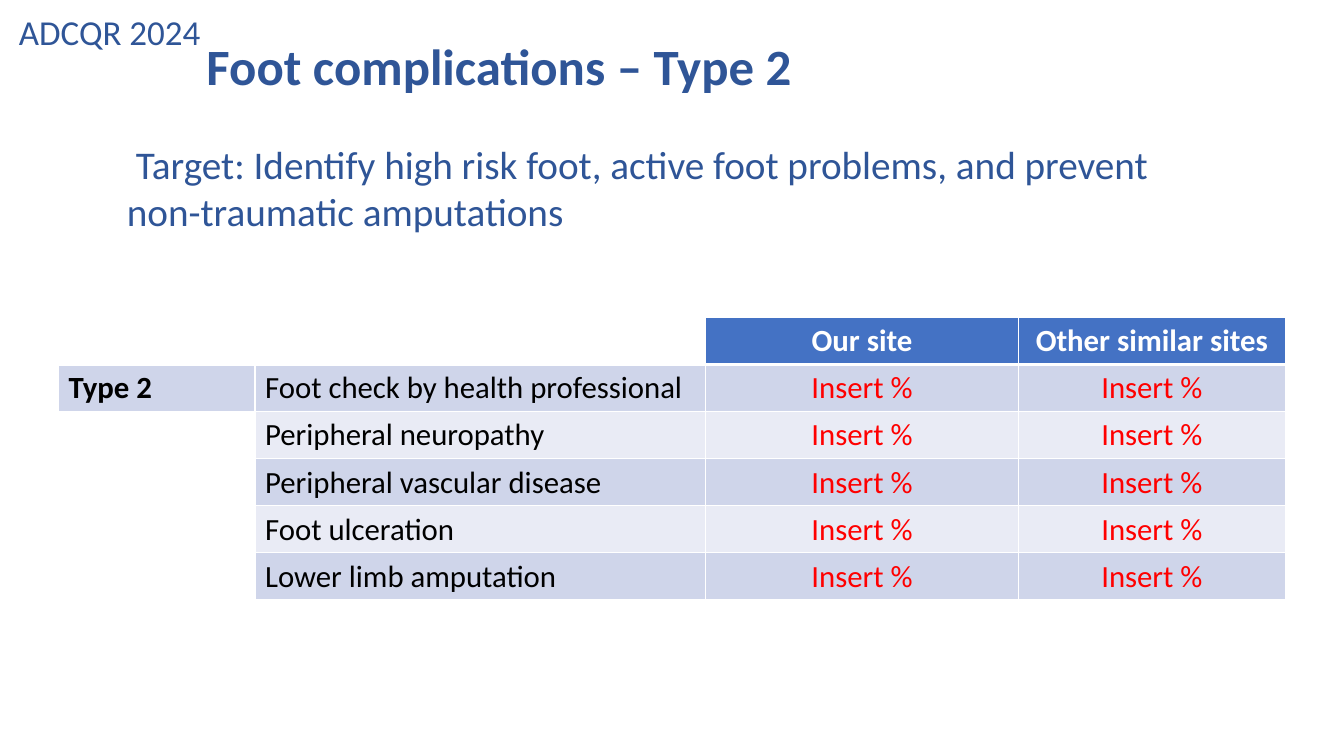
from lxml.etree import SubElement
from pptx import Presentation
from pptx.dml.color import RGBColor
from pptx.enum.text import MSO_ANCHOR as Anchor, PP_ALIGN as Align
from pptx.oxml.ns import qn
from pptx.util import Inches, Pt

TITLE = "Foot complications – Type 2"
TARGET = ("Target: Identify high risk foot, active foot problems, "
          "and prevent non-traumatic amputations")
REGISTRY = "ADCQR 2024"
ROWS = [
    ("", "", "Our site", "Other similar sites"),
    ("Type 2", "Foot check by health professional", "Insert %", "Insert %"),
    ("", "Peripheral neuropathy", "Insert %", "Insert %"),
    ("", "Peripheral vascular disease", "Insert %", "Insert %"),
    ("", "Foot ulceration", "Insert %", "Insert %"),
    ("", "Lower limb amputation", "Insert %", "Insert %"),
]
COLUMN_WIDTHS = (1.95, 4.47, 3.1, 2.65)
TABLE_LEFT, TABLE_TOP, TABLE_HEIGHT = 0.58, 3.15, 2.8
FONT = "Calibri"
NAVY, BLUE, WHITE, BLACK, RED = "2F5597", "4472C4", "FFFFFF", "000000", "FF0000"
BANDS = ("E9EBF5", "CFD5EA")


def color(value):
    return RGBColor.from_string(value)


def style(paragraph, size, value, bold=False):
    font = paragraph.font
    font.name, font.size, font.bold = FONT, Pt(size), bold
    font.color.rgb = color(value)


def add_text(slide, text, box, size, bold=False):
    shape = slide.shapes.add_textbox(*map(Inches, box))
    frame = shape.text_frame
    frame.word_wrap = True
    frame.text = text
    style(frame.paragraphs[0], size, NAVY, bold)
    return frame


def set_borders(cell, bottom_width):
    properties = cell._tc.get_or_add_tcPr()
    widths = {"a:lnL": 1, "a:lnR": 1, "a:lnT": 1, "a:lnB": bottom_width}
    for position, (side, width) in enumerate(widths.items()):
        line = SubElement(properties, qn(side), w=str(Pt(width)))
        fill = SubElement(line, qn("a:solidFill"))
        SubElement(fill, qn("a:srgbClr"), val=WHITE)
        properties.insert(position, line)


def fill_cell(cell, text, row, column):
    header, value_column = row == 0, column > 1
    if not text:
        background = WHITE
    else:
        background = BLUE if header else BANDS[row % 2]
    cell.fill.solid()
    cell.fill.fore_color.rgb = color(background)
    set_borders(cell, 3 if header else 1)
    cell.text = text
    paragraph = cell.text_frame.paragraphs[0]
    paragraph.alignment = Align.CENTER if value_column else Align.LEFT
    ink = WHITE if header else RED if value_column else BLACK
    style(paragraph, 22, ink, header or column == 0)


def add_results(slide):
    box = (TABLE_LEFT, TABLE_TOP, sum(COLUMN_WIDTHS), TABLE_HEIGHT)
    table = slide.shapes.add_table(
        len(ROWS), len(COLUMN_WIDTHS), *map(Inches, box)).table
    for column, width in zip(table.columns, COLUMN_WIDTHS):
        column.width = Inches(width)
    for row, texts in enumerate(ROWS):
        for column, text in enumerate(texts):
            fill_cell(table.cell(row, column), text, row, column)


def main():
    presentation = Presentation()
    presentation.slide_width = Inches(13.33)
    presentation.slide_height = Inches(7.5)
    slide = presentation.slides.add_slide(presentation.slide_layouts[6])

    title = add_text(slide, TITLE, (1.95, 0.05, 6.37, 1.45), 36.3, True)
    title.vertical_anchor = Anchor.MIDDLE
    title.margin_bottom = Inches(0.3)

    target = add_text(slide, TARGET, (1.16, 1.34, 10.77, 1.04), 28)
    target.paragraphs[0]._p.get_or_add_pPr().set("indent", str(Inches(0.09)))

    add_results(slide)
    add_text(slide, REGISTRY, (0.09, 0.05, 2.1, 0.52), 25)
    presentation.save("out.pptx")


if __name__ == "__main__":
    main()
